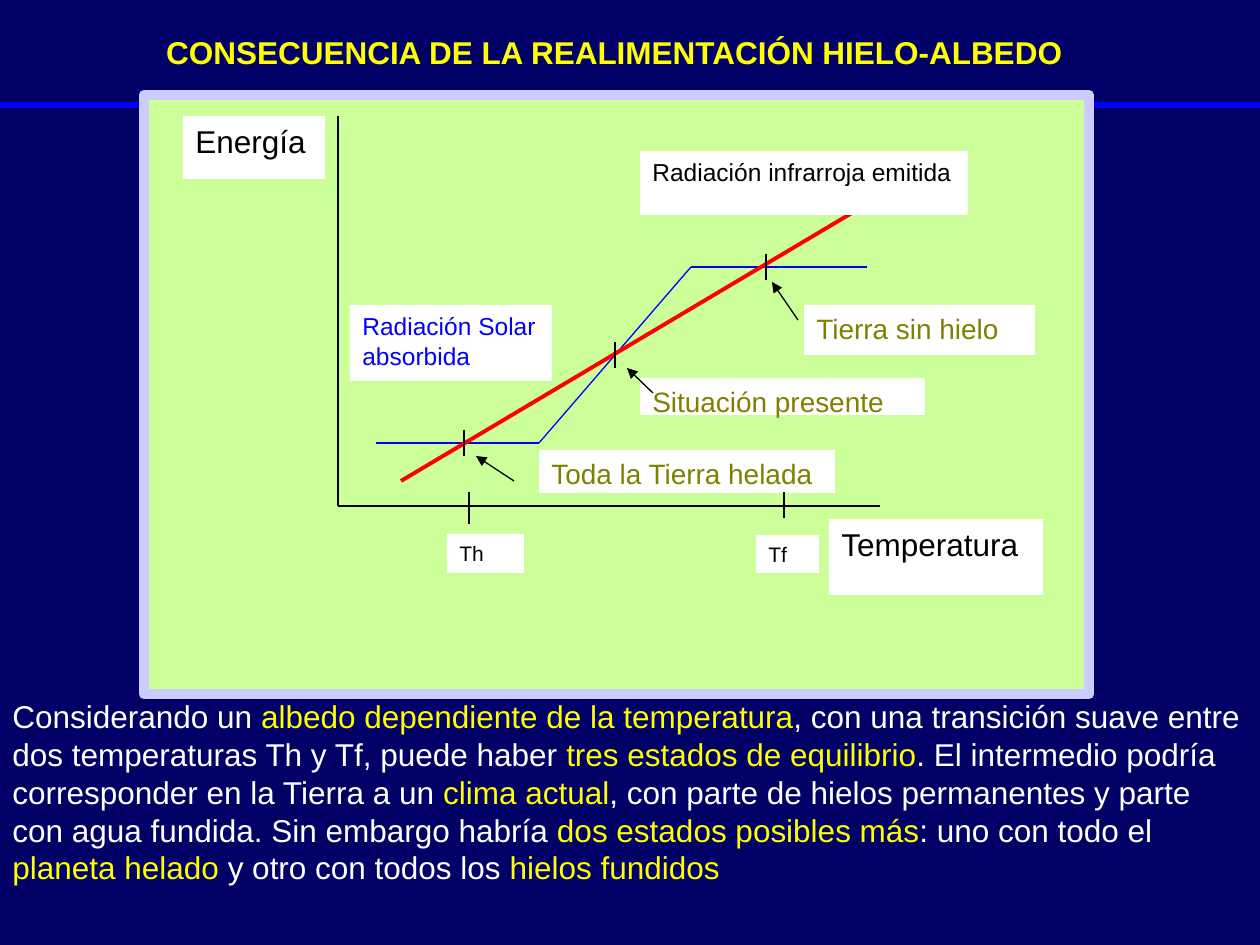
from itertools import cycle, pairwise

from lxml import etree
from pptx import Presentation
from pptx.dml.color import RGBColor
from pptx.enum.shapes import MSO_CONNECTOR, MSO_SHAPE
from pptx.enum.text import MSO_ANCHOR, PP_ALIGN
from pptx.oxml.ns import qn
from pptx.util import Emu, Pt

STRAIGHT = MSO_CONNECTOR.STRAIGHT
RECTANGLE = MSO_SHAPE.RECTANGLE
TOP = MSO_ANCHOR.TOP
LEFT, CENTER = PP_ALIGN.LEFT, PP_ALIGN.CENTER

PX_PER_INCH = 126
BLACK, WHITE, YELLOW = "000000", "FFFFFF", "FFFF00"
BLUE, RED, OLIVE = "0000FF", "FF0000", "808000"
NAVY, GREEN, LAVENDER = "000066", "CCFF99", "CCCCFF"


def px(value):
    return Emu(round(value * 914400 / PX_PER_INCH))


def rgb(value):
    return RGBColor.from_string(value)


class SlideBuilder:
    font_name = "Arial"

    def __init__(self, slide):
        self.slide = slide

    def background(self, color):
        fill = self.slide.background.fill
        fill.solid()
        fill.fore_color.rgb = rgb(color)

    def line(self, start, end, color=BLACK, width=0.75, arrow=False):
        connector = self.slide.shapes.add_connector(
            STRAIGHT, *map(px, (*start, *end)))
        connector.line.color.rgb = rgb(color)
        connector.line.width = Pt(width)
        properties = connector._element.spPr
        if arrow:
            etree.SubElement(properties.find(qn("a:ln")),
                             qn("a:tailEnd"), type="triangle")
        etree.SubElement(properties, qn("a:effectLst"))

    def polyline(self, points, color=BLACK):
        for start, end in pairwise(points):
            self.line(start, end, color)

    def tick(self, x, top, bottom):
        self.line((x, top), (x, bottom))

    def rectangle(self, box, fill, border=None, border_width=0):
        shape = self.slide.shapes.add_shape(RECTANGLE, *map(px, box))
        shape.shadow.inherit = False
        shape.fill.solid()
        shape.fill.fore_color.rgb = rgb(fill)
        if border:
            shape.line.color.rgb = rgb(border)
            shape.line.width = Pt(border_width)
        else:
            shape.line.fill.background()
        return shape

    def add_runs(self, shape, runs, size, alignment=LEFT, bold=False):
        """Fill a shape with one paragraph of (text, color) runs."""
        frame = shape.text_frame
        frame.word_wrap = True
        frame.vertical_anchor = TOP
        paragraph = frame.paragraphs[0]
        paragraph.alignment = alignment
        font_format = {"name": self.font_name, "size": Pt(size), "bold": bold}
        for text, color in runs:
            run = paragraph.add_run()
            run.text = text
            for name, value in font_format.items():
                setattr(run.font, name, value)
            run.font.color.rgb = rgb(color)

    def label(self, text, box, size, color=BLACK):
        self.add_runs(self.rectangle(box, WHITE), [(text, color)], size)

    def text(self, runs, box, size, **style):
        shape = self.slide.shapes.add_textbox(*map(px, box))
        self.add_runs(shape, runs, size, **style)


def draw_chart(builder):
    builder.polyline([(338, 116), (338, 506), (880, 506)])
    builder.polyline([(376, 443), (539, 443), (691, 267), (867, 267)], BLUE)
    builder.line((867, 204), (401, 481), RED, 2.25)

    for x, y in [(464, 443), (615, 355), (766, 267)]:
        builder.tick(x, y - 13, y + 13)

    labels = [
        ("Energía", (183, 116, 142, 63), 18, BLACK),
        ("Temperatura", (829, 519, 214, 76), 18, BLACK),
        ("Radiación infrarroja emitida", (640, 151, 328, 64), 14, BLACK),
        ("Radiación Solar absorbida", (350, 305, 202, 76), 14, BLUE),
        ("Tierra sin hielo", (804, 305, 231, 50), 16, OLIVE),
        ("Situación presente", (640, 378, 285, 37), 16, OLIVE),
        ("Toda la Tierra helada", (539, 450, 296, 43), 16, OLIVE),
        ("Th", (447, 534, 77, 39), 12, BLACK),
        ("Tf", (756, 535, 63, 38), 12, BLACK),
    ]
    for label in labels:
        builder.label(*label)

    for start, end in [((798, 320), (772, 282)), ((653, 393), (627, 368)),
                       ((514, 481), (476, 456))]:
        builder.line(start, end, arrow=True)

    builder.tick(469, 492, 524)
    builder.tick(784, 492, 518)


def main():
    presentation = Presentation()
    presentation.slide_width = px(1260)
    presentation.slide_height = px(945)
    slide = presentation.slides.add_slide(presentation.slide_layouts[6])
    builder = SlideBuilder(slide)

    builder.background(NAVY)
    builder.line((0, 105), (1260, 105), BLUE, 3)
    builder.rectangle((144, 95, 945, 599), GREEN, LAVENDER, 6)
    draw_chart(builder)

    explanation = [
        "Considerando un ",
        "albedo dependiente de la temperatura",
        ", con una transición suave entre dos temperaturas Th y Tf, "
        "puede haber ",
        "tres estados de equilibrio",
        ". El intermedio podría corresponder en la Tierra a un ",
        "clima actual",
        ", con parte de hielos permanentes y parte con agua fundida. "
        "Sin embargo habría ",
        "dos estados posibles más",
        ": uno con todo el ",
        "planeta helado ",
        "y otro con todos los ",
        "hielos fundidos",
    ]
    builder.text(zip(explanation, cycle([WHITE, YELLOW])),
                 (0, 691, 1260, 204), 18)
    builder.text([("CONSECUENCIA DE LA REALIMENTACIÓN HIELO-ALBEDO", YELLOW)],
                 (123, 27, 983, 50), 18, alignment=CENTER, bold=True)
    presentation.save("out.pptx")


if __name__ == "__main__":
    main()
